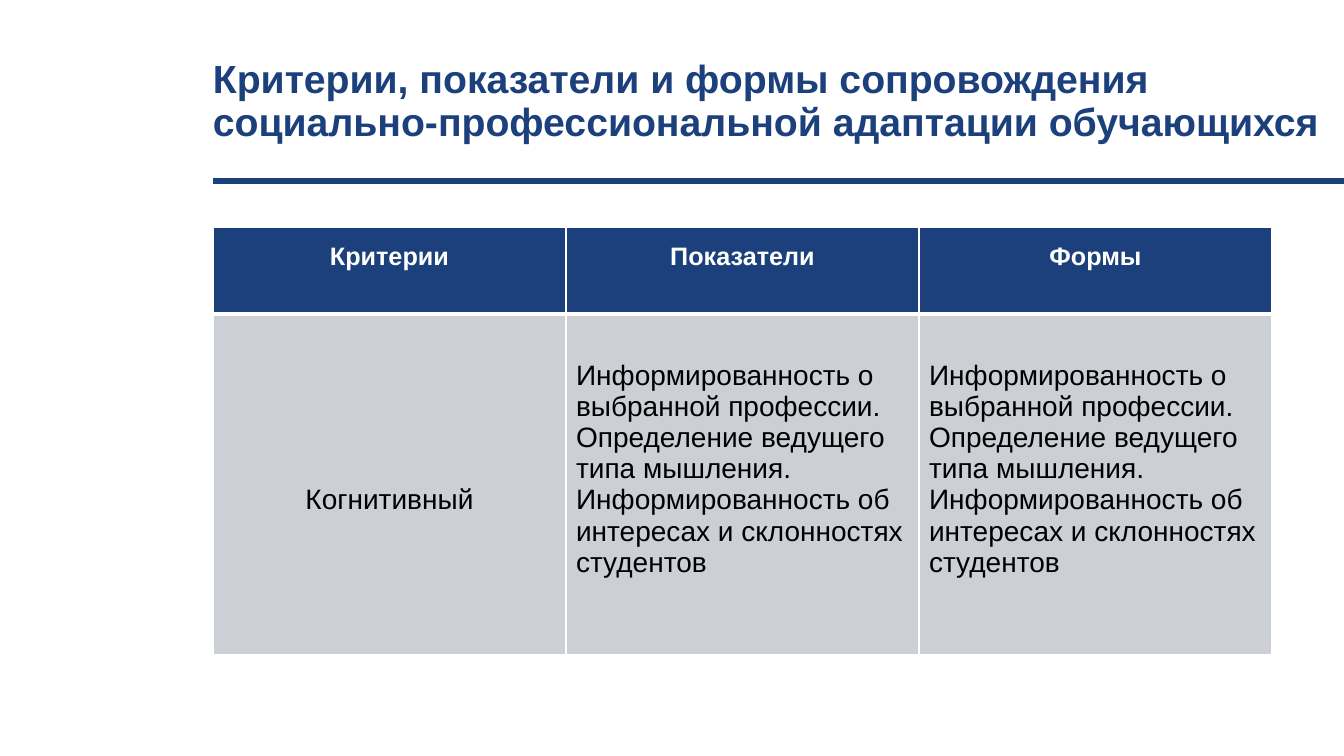
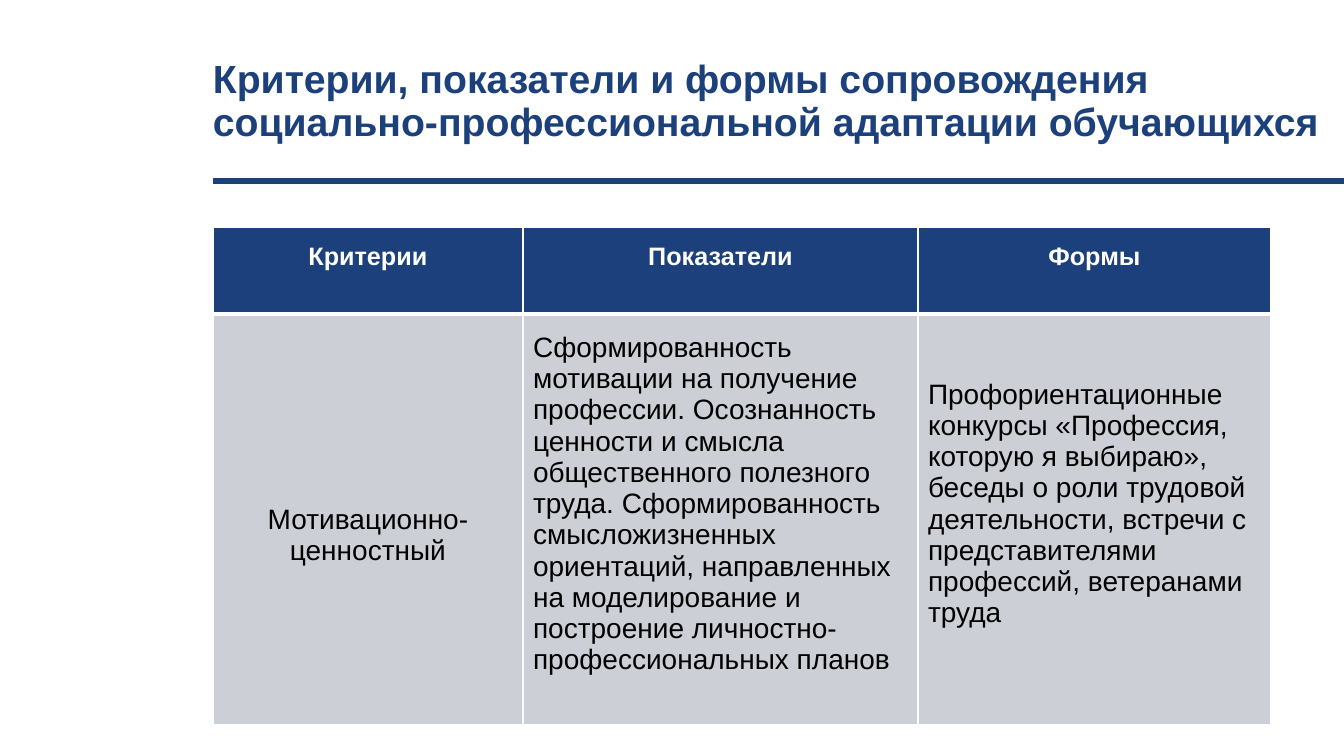
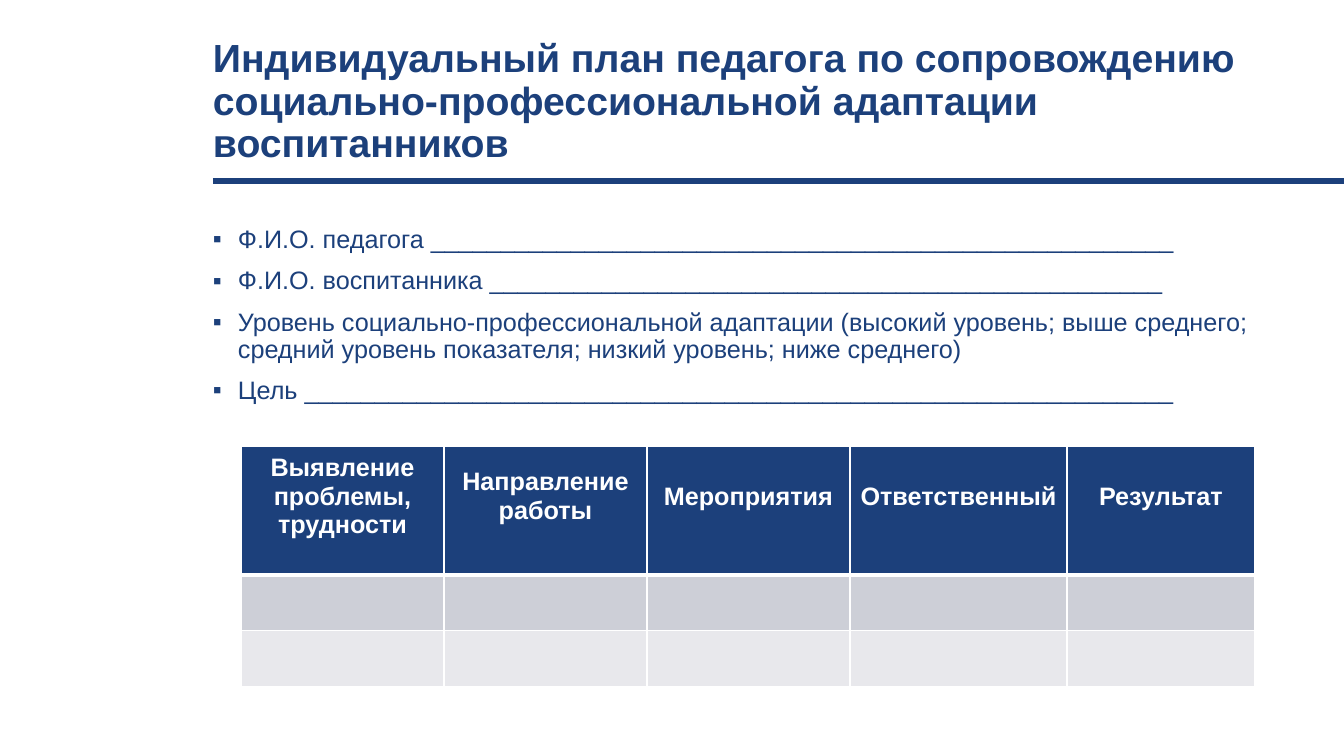
"""Build three slides on the social and professional adaptation of students."""
from lxml import etree
from pptx import Presentation
from pptx.dml.color import RGBColor
from pptx.enum.shapes import MSO_CONNECTOR
from pptx.enum.text import MSO_ANCHOR, PP_ALIGN
from pptx.oxml.ns import qn
from pptx.util import Pt

LEFT, CENTER = PP_ALIGN.LEFT, PP_ALIGN.CENTER
TOP, MIDDLE = MSO_ANCHOR.TOP, MSO_ANCHOR.MIDDLE
STRAIGHT = MSO_CONNECTOR.STRAIGHT

SCALE = 914400 / 100.8
SLIDE_W, SLIDE_H = 1344, 756
MARGIN_X, RULE_Y, CONTENT_Y, CONTENT_W = 213, 181, 227, 1058
TITLE_W = SLIDE_W - MARGIN_X
BULLET_INDENT = 25
PAD, HEAD_PAD, BODY_PAD = 5, 33, 36

THEME = {
    "font": "Arial", "navy": "1C407B", "white": "FFFFFF", "black": "000000",
    "bands": ("CDCFD7", "E8E8EC"),
    "title": 28, "head": 18, "body": 20, "list": 18,
    "rule": 4.5, "border": 1, "head_border": 3, "spacing": 0.9, "gap": 10,
}
TITLE_STYLE = {"size": THEME["title"], "color": THEME["navy"], "bold": True}
HEAD_STYLE = {"size": THEME["head"], "color": THEME["white"], "bold": True}
BODY_STYLE = {"size": THEME["body"], "color": THEME["black"], "bold": False}
LIST_STYLE = {"size": THEME["list"], "color": THEME["navy"], "bold": False}

CRITERIA_TITLE = ("Критерии, показатели и формы сопровождения "
                  "социально-профессиональной адаптации обучающихся")
CRITERIA_HEAD = ["Критерии", "Показатели", "Формы"]
AWARENESS = [
    "Информированность о выбранной профессии.",
    "Определение ведущего типа мышления.",
    "Информированность об интересах и склонностях студентов",
]

SLIDES = [
    {
        "title": CRITERIA_TITLE, "title_y": 60, "title_h": 88,
        "table": {
            "at": (MARGIN_X, CONTENT_Y), "cols": (353, 353, 353), "rows": (87, 341),
            "head": CRITERIA_HEAD,
            "body": [[["Когнитивный"], AWARENESS, AWARENESS]],
        },
    },
    {
        "title": CRITERIA_TITLE, "title_y": 60, "title_h": 88,
        "table": {
            "at": (MARGIN_X, CONTENT_Y), "cols": (310, 395, 353), "rows": (87, 384),
            "head": CRITERIA_HEAD,
            "body": [[
                ["Мотивационно-ценностный"],
                ["Сформированность мотивации на получение профессии. Осознанность ценности "
                 "и смысла общественного полезного труда. Сформированность смысложизненных "
                 "ориентаций, направленных на моделирование и построение "
                 "личностно-профессиональных планов"],
                ["Профориентационные конкурсы «Профессия, которую я выбираю», беседы о роли "
                 "трудовой деятельности, встречи с представителями профессий, ветеранами труда"],
            ]],
        },
    },
    {
        "title": ("Индивидуальный план педагога по сопровождению "
                  "социально-профессиональной адаптации воспитанников"),
        "title_y": 39, "title_h": 108,
        "bullets": [
            "Ф.И.О. педагога _____________________________________________________",
            "Ф.И.О. воспитанника ________________________________________________",
            "Уровень социально-профессиональной адаптации (высокий уровень; выше среднего; "
            "средний уровень показателя; низкий уровень; ниже среднего)",
            "Цель ______________________________________________________________",
        ],
        "table": {
            "at": (241, 446), "cols": (203, 203, 203, 217, 188), "rows": (122, 56, 56),
            "head": ["Выявление проблемы, трудности", "Направление работы",
                     "Мероприятия", "Ответственный", "Результат"],
            "body": [[[]] * 5] * 2,
        },
    },
]


def px(value):
    return round(value * SCALE)


def rgb(name):
    return RGBColor.from_string(name)


def style_font(font, style):
    font.color.rgb = rgb(style["color"])
    values = {"name": THEME["font"], "size": Pt(style["size"]), "bold": style["bold"]}
    for key, value in values.items():
        setattr(font, key, value)


def write(tf, texts, style, **formats):
    for i, text in enumerate(texts):
        p = tf.paragraphs[0] if i == 0 else tf.add_paragraph()
        for key, value in formats.items():
            setattr(p, key, value)
        r = p.add_run()
        r.text = text
        style_font(r.font, style)


def add_text(s, box, texts, style, **formats):
    tf = s.shapes.add_textbox(*map(px, box)).text_frame
    tf.word_wrap = True
    tf.vertical_anchor = TOP
    for side in ("left", "top", "right", "bottom"):
        setattr(tf, f"margin_{side}", 0)
    write(tf, texts, style, line_spacing=THEME["spacing"], **formats)
    return tf


def add_rule(s):
    line = s.shapes.add_connector(STRAIGHT, px(MARGIN_X), px(RULE_Y), px(SLIDE_W), px(RULE_Y))
    line.line.color.rgb = rgb(THEME["navy"])
    line.line.width = Pt(THEME["rule"])
    etree.SubElement(line._element.spPr, qn("a:effectLst"))


def add_bullets(s, texts):
    box = (MARGIN_X, CONTENT_Y, CONTENT_W, 469)
    tf = add_text(s, box, texts, LIST_STYLE)
    for i, p in enumerate(tf.paragraphs):
        if i:
            p.space_before = Pt(THEME["gap"])
        pPr = p._p.get_or_add_pPr()
        pPr.set("marL", str(px(BULLET_INDENT)))
        pPr.set("indent", str(-px(BULLET_INDENT)))
        color = etree.SubElement(pPr, qn("a:buClr"))
        etree.SubElement(color, qn("a:srgbClr"), val=THEME["navy"])
        etree.SubElement(pPr, qn("a:buFont"), typeface=THEME["font"])
        etree.SubElement(pPr, qn("a:buChar"), char="▪")


def set_borders(cell, bottom):
    tcPr = cell._tc.get_or_add_tcPr()
    for i, side in enumerate("LRTB"):
        width = bottom if side == "B" else THEME["border"]
        ln = etree.Element(qn(f"a:ln{side}"), w=str(Pt(width)))
        fill = etree.SubElement(ln, qn("a:solidFill"))
        etree.SubElement(fill, qn("a:srgbClr"), val=THEME["white"])
        tcPr.insert(i, ln)


def fill_cell(cell, row, col, texts):
    is_head = row == 0
    cell.fill.solid()
    cell.fill.fore_color.rgb = rgb(THEME["navy"] if is_head else THEME["bands"][row - 1])
    set_borders(cell, THEME["head_border"] if is_head else THEME["border"])
    cell.vertical_anchor = MIDDLE
    if not texts:
        return
    is_label = not is_head and col == 0
    cell.margin_top = px(BODY_PAD if is_label else PAD)
    cell.margin_bottom = px(HEAD_PAD if is_head else PAD if is_label else BODY_PAD)
    write(cell.text_frame, texts, HEAD_STYLE if is_head else BODY_STYLE,
          alignment=CENTER if is_head or is_label else LEFT)


def add_grid(s, spec):
    cols, rows = spec["cols"], spec["rows"]
    box = (*spec["at"], sum(cols), sum(rows))
    table = s.shapes.add_table(len(rows), len(cols), *map(px, box)).table
    for column, width in zip(table.columns, cols):
        column.width = px(width)
    for row, height in zip(table.rows, rows):
        row.height = px(height)
    content = [[[text] for text in spec["head"]], *spec["body"]]
    for i, line in enumerate(content):
        for j, texts in enumerate(line):
            fill_cell(table.cell(i, j), i, j, texts)


def build_slide(prs, data):
    s = prs.slides.add_slide(prs.slide_layouts[6])
    add_rule(s)
    add_text(s, (MARGIN_X, data["title_y"], TITLE_W, data["title_h"]), [data["title"]], TITLE_STYLE)
    if "bullets" in data:
        add_bullets(s, data["bullets"])
    add_grid(s, data["table"])


def main():
    prs = Presentation()
    prs.slide_width, prs.slide_height = px(SLIDE_W), px(SLIDE_H)
    for data in SLIDES:
        build_slide(prs, data)
    prs.save("out.pptx")


if __name__ == "__main__":
    main()
